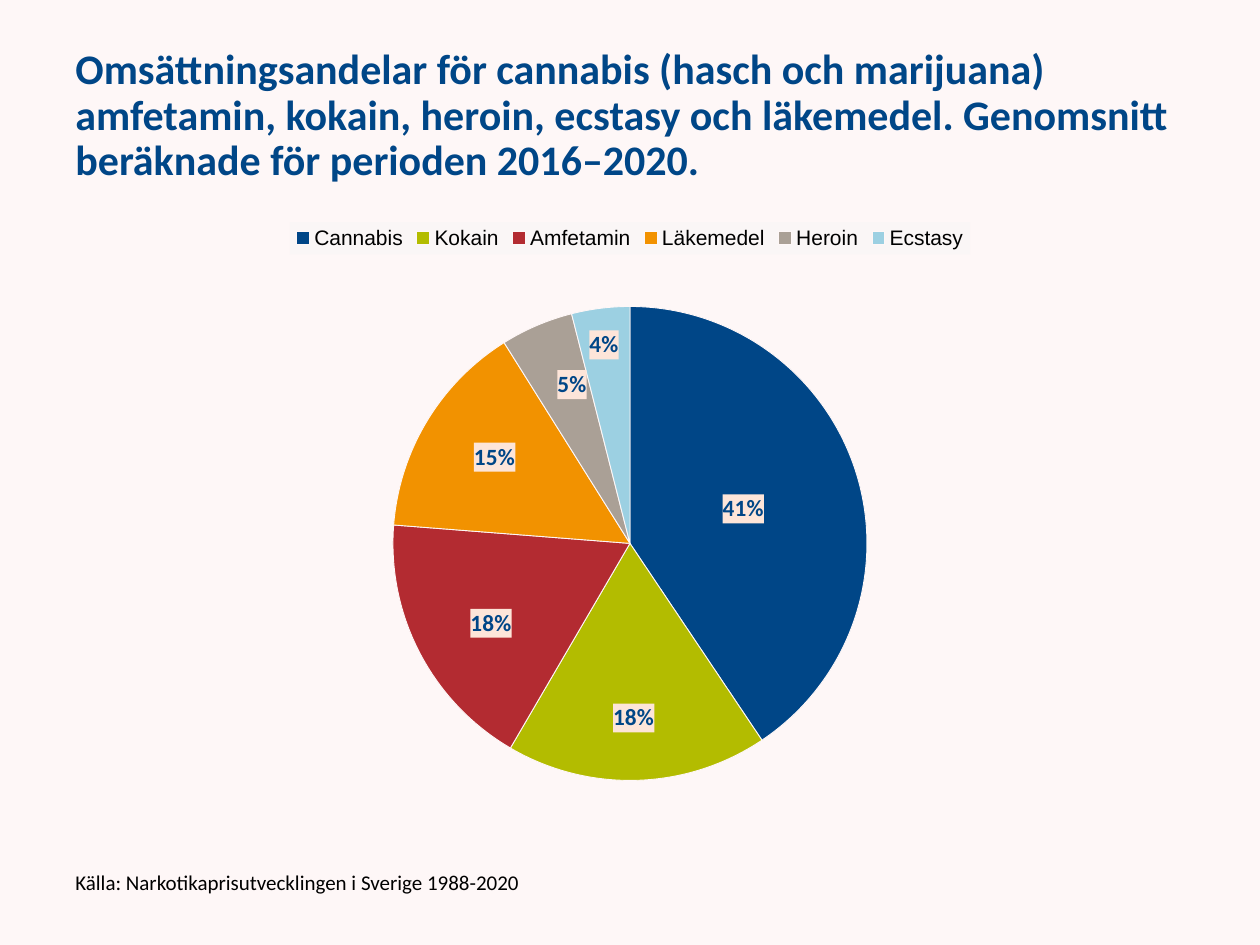
from copy import deepcopy

from pptx import Presentation
from pptx.chart.data import CategoryChartData
from pptx.dml.color import RGBColor
from pptx.enum.chart import XL_CHART_TYPE as ChartType
from pptx.enum.chart import XL_LABEL_POSITION as LabelPos
from pptx.enum.chart import XL_LEGEND_POSITION as LegendPos
from pptx.enum.text import MSO_ANCHOR as Anchor
from pptx.oxml import parse_xml
from pptx.oxml.ns import nsdecls, qn
from pptx.util import Inches, Pt

WIDTH, HEIGHT = 10, 7.5
MARGIN = WIDTH * 0.05
NAVY, BLACK, BACKGROUND = "004687", "000000", "FEF7F7"
LABEL_FILL, LEGEND_FILL = "FDE5D9", "FAF6F6"

TITLE = ("Omsättningsandelar för cannabis (hasch och marijuana) amfetamin, kokain, "
         "heroin, ecstasy och läkemedel. Genomsnitt beräknade för perioden 2016–2020.")
SOURCE = "Källa: Narkotikaprisutvecklingen i Sverige 1988-2020"
SHARES = [
    ("Cannabis", 41, "004687", (0, 0)),
    ("Kokain", 18, "B3BC00", (0, 0.09)),
    ("Amfetamin", 18, "B32B31", (-0.03, 0.04)),
    ("Läkemedel", 15, "F29200", (-0.03, -0.04)),
    ("Heroin", 5, "AAA096", (-0.01, -0.08)),
    ("Ecstasy", 4, "9CD0E2", (-0.01, -0.13)),
]
PIE_AREA = {"x": 0.29, "y": 0.15, "w": 0.42, "h": 0.76}

TITLE_FONT = {"name": "Calibri", "size": Pt(24), "bold": True}
SOURCE_FONT = {"name": "Calibri", "size": Pt(12), "bold": False}
CHART_FONT = {"name": "Calibri", "size": Pt(10)}
LEGEND_FONT = {"name": "Arial", "size": Pt(12)}
LABEL_FONT = {"name": "Calibri", "size": Pt(13.3), "bold": True}


def rgb(color):
    return RGBColor.from_string(color)


def set_all(target, values):
    for key, value in values.items():
        setattr(target, key, value)


def style_font(font, values, color):
    set_all(font, values)
    font.color.rgb = rgb(color)


def add_text(slide, box, text, font, color):
    frame = slide.shapes.add_textbox(*map(Inches, box)).text_frame
    set_all(frame, {"word_wrap": True, "vertical_anchor": Anchor.MIDDLE})
    paragraph = frame.paragraphs[0]
    paragraph.line_spacing = 0.9
    run = paragraph.add_run()
    run.text = text
    style_font(run.font, font, color)


def layout_xml(values, inner=False):
    target = '<c:layoutTarget val="inner"/>' if inner else ""
    modes = "".join(f'<c:{k}Mode val="edge"/>' for k in "xy") if inner else ""
    sizes = "".join(f'<c:{k} val="{v}"/>' for k, v in values.items())
    return parse_xml(f'<c:layout {nsdecls("c")}><c:manualLayout>{target}{modes}{sizes}'
                     "</c:manualLayout></c:layout>")


def fill_before_text(element, color):
    element.find(qn("c:txPr")).addprevious(parse_xml(
        f'<c:spPr {nsdecls("c", "a")}><a:solidFill><a:srgbClr val="{color}"/>'
        "</a:solidFill></c:spPr>"))


def place_labels(labels_xml, offsets):
    shared = [part for part in labels_xml if part.tag != qn("c:showLeaderLines")]
    for index, (dx, dy) in enumerate(offsets):
        label = parse_xml(f'<c:dLbl {nsdecls("c")}><c:idx val="{index}"/></c:dLbl>')
        label.append(layout_xml({"x": dx, "y": dy}))
        label.extend(deepcopy(part) for part in shared)
        labels_xml.insert(index, label)


def add_pie(slide, box):
    names, values, colors, offsets = zip(*SHARES)
    data = CategoryChartData()
    data.categories = names
    data.add_series("Series 1", values)
    chart = slide.shapes.add_chart(ChartType.PIE, *map(Inches, box), data).chart
    set_all(chart, {"has_title": False, "has_legend": True})
    style_font(chart.font, CHART_FONT, BLACK)

    legend = chart.legend
    set_all(legend, {"position": LegendPos.TOP, "include_in_layout": False})
    style_font(legend.font, LEGEND_FONT, BLACK)
    fill_before_text(legend._element, LEGEND_FILL)

    plot = chart.plots[0]
    plot.vary_by_categories = True
    plot_area = plot._element.getparent()
    for old_layout in plot_area.findall(qn("c:layout")):
        plot_area.remove(old_layout)
    plot_area.insert(0, layout_xml(PIE_AREA, inner=True))

    series = plot.series[0]
    for index, color in enumerate(colors):
        wedge = series.points[index].format
        wedge.fill.solid()
        wedge.fill.fore_color.rgb = rgb(color)
        wedge.line.color.rgb = rgb(BACKGROUND)
        wedge.line.width = Pt(0.5)

    labels = series.data_labels
    set_all(labels, {"show_value": False, "show_percentage": True,
                     "number_format": "0%", "number_format_is_linked": False,
                     "position": LabelPos.CENTER})
    style_font(labels.font, LABEL_FONT, NAVY)
    fill_before_text(labels._element, LABEL_FILL)
    place_labels(labels._element, offsets)


def main():
    deck = Presentation()
    set_all(deck, {"slide_width": Inches(WIDTH), "slide_height": Inches(HEIGHT)})
    slide = deck.slides.add_slide(deck.slide_layouts[6])
    slide.background.fill.solid()
    slide.background.fill.fore_color.rgb = rgb(BACKGROUND)

    content_width = WIDTH - 2 * MARGIN
    add_text(slide, (MARGIN, HEIGHT * 0.04, content_width, 1.25), TITLE, TITLE_FONT, NAVY)
    add_pie(slide, (MARGIN, 1.69, content_width, HEIGHT * 0.66))
    add_text(slide, (MARGIN, 6.83, content_width / 2, 0.37), SOURCE, SOURCE_FONT, BLACK)
    deck.save("out.pptx")


if __name__ == "__main__":
    main()
